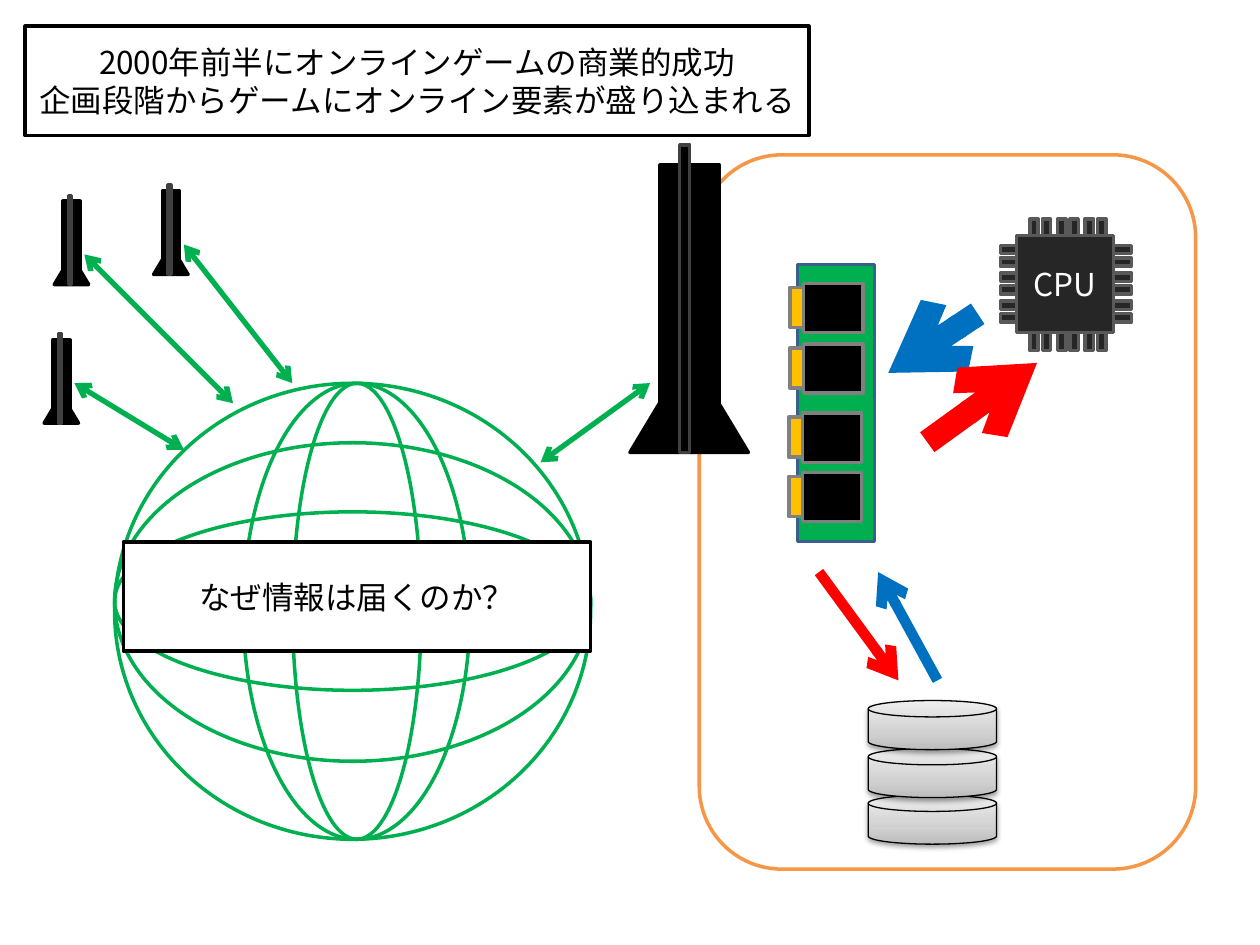
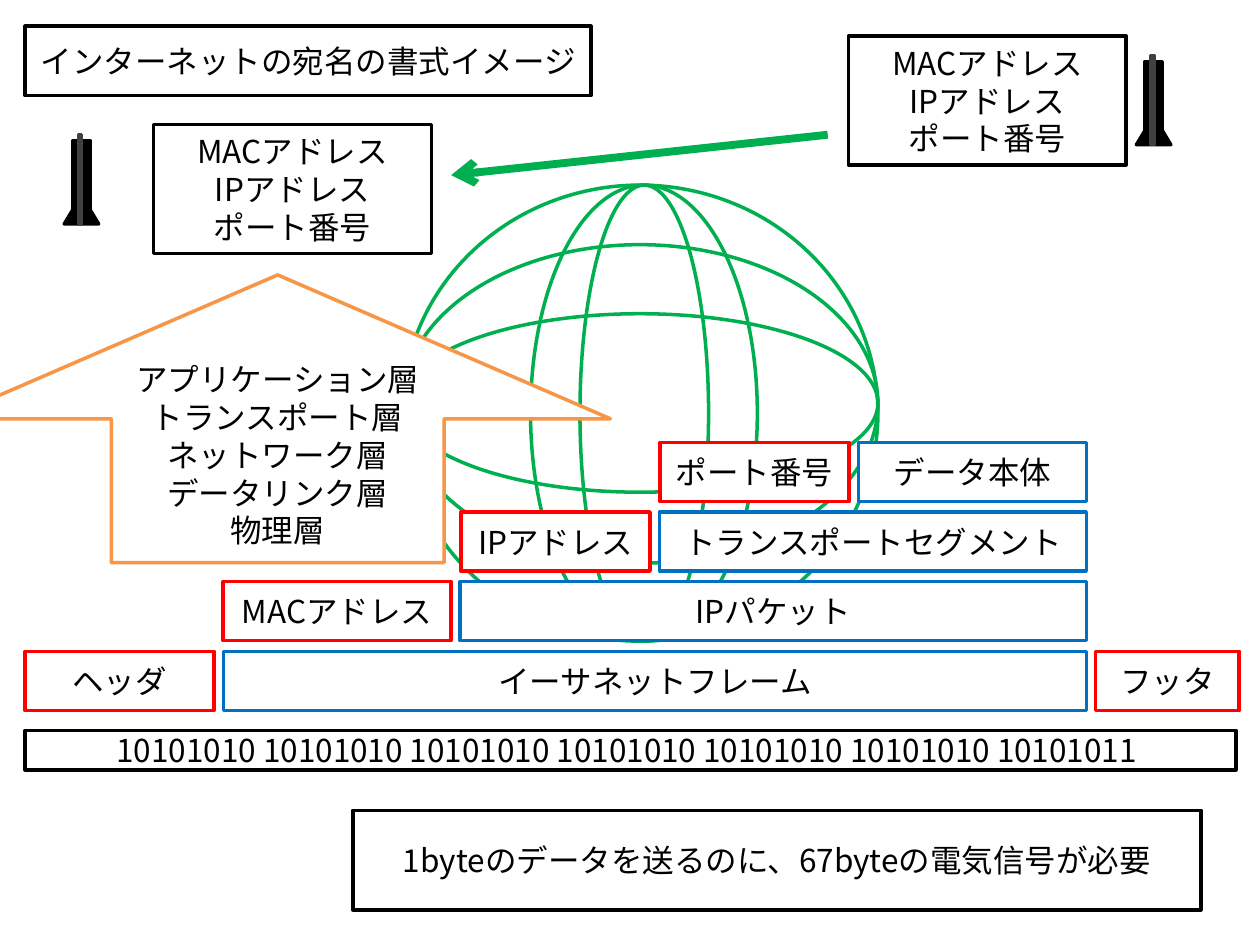
from dataclasses import dataclass

from lxml import etree
from pptx import Presentation
from pptx.dml.color import RGBColor
from pptx.enum.shapes import MSO_CONNECTOR, MSO_SHAPE
from pptx.enum.text import MSO_ANCHOR, PP_ALIGN
from pptx.oxml.ns import qn
from pptx.util import Pt

RECT = MSO_SHAPE.RECTANGLE
ROUNDED = MSO_SHAPE.ROUNDED_RECTANGLE
TRIANGLE = MSO_SHAPE.ISOSCELES_TRIANGLE
ELLIPSE = MSO_SHAPE.OVAL
EQUAL = MSO_SHAPE.MATH_EQUAL
DISK = MSO_SHAPE.FLOWCHART_MAGNETIC_DISK
BLOCK_ARROW = MSO_SHAPE.RIGHT_ARROW
STRAIGHT = MSO_CONNECTOR.STRAIGHT
MIDDLE = MSO_ANCHOR.MIDDLE
CENTER = PP_ALIGN.CENTER


@dataclass(frozen=True)
class Theme:
    font: str = "Noto Sans CJK JP"
    text_size: float = 18
    outline: float = 2
    hairline: float = 0.75
    white: str = "FFFFFF"
    black: str = "000000"
    green: str = "00B050"
    orange: str = "F79646"
    blue: str = "0070C0"
    red: str = "FF0000"
    gold: str = "FFC000"
    gray: str = "808080"
    tower_edge: str = "404040"
    cpu_fill: str = "262626"
    cpu_edge: str = "595959"
    board_edge: str = "3A5F8C"
    disk_stops: tuple = ((0, "BDBDBD"), (35, "D1D1D1"), (100, "EEEEEE"))


theme = Theme()


def add_box(shapes, kind, place, fill, line, text="", color=theme.black, weight=theme.outline):
    box = shapes.add_shape(kind, *[Pt(value) for value in place])
    box.shadow.inherit = False
    if fill:
        box.fill.solid()
        box.fill.fore_color.rgb = RGBColor.from_string(fill)
    else:
        box.fill.background()
    box.line.color.rgb = RGBColor.from_string(line)
    box.line.width = Pt(weight)
    if text:
        frame = box.text_frame
        frame.text = text
        frame.vertical_anchor = MIDDLE
        font_format = {"size": Pt(theme.text_size), "name": theme.font}
        for para in frame.paragraphs:
            para.alignment = CENTER
            for span in para.runs:
                for name, value in font_format.items():
                    setattr(span.font, name, value)
                span.font.color.rgb = RGBColor.from_string(color)
                properties = span.font._element
                etree.SubElement(properties, qn("a:ea"), typeface=theme.font)
    return box


def add_arrow(page, start, end, color, weight, ends=("tailEnd",)):
    arrow = page.shapes.add_connector(STRAIGHT, *[Pt(value) for value in start + end])
    arrow.line.color.rgb = RGBColor.from_string(color)
    arrow.line.width = Pt(weight)
    outline = arrow.line._get_or_add_ln()
    for end_name in ends:
        etree.SubElement(outline, qn(f"a:{end_name}"), type="arrow")
    etree.SubElement(arrow._element.spPr, qn("a:effectLst"))


deck = Presentation()
deck.slide_width, deck.slide_height = Pt(720), Pt(540)
blank = deck.slide_layouts[6]
online_page, address_page = [deck.slides.add_slide(blank) for _ in range(2)]

add_box(online_page.shapes, ROUNDED, (399.6, 88.5, 283.7, 408.2), theme.white, theme.orange)

shared_parts = (
    (
        online_page,
        "2000年前半にオンラインゲームの商業的成功\n企画段階からゲームにオンライン要素が盛り込まれる",
        (14.4, 15, 447.8, 62.6),
        (65.5, 219),
        ((360, 82.8, 175.7), (31, 111.6, 51), (87.8, 105.8, 51), (25.2, 190.8, 51)),
    ),
    (
        address_page,
        "インターネットの宛名の書式イメージ",
        (14.4, 15, 323.3, 39.6),
        (229.7, 105.8),
        ((36.7, 77, 51), (649.4, 31.7, 51)),
    ),
)
globe_rings = (
    (0, 0, 272, 260.6, theme.white),
    (0, 34, 272, 182, None),
    (0, 73.5, 272, 102, None),
    (73.5, 0, 129.6, 260.6, None),
    (101.7, 0, 73.5, 260.6, None),
)
tower_parts = (
    (RECT, 0.255, 0.066, 0.5, 0.807, theme.black),
    (TRIANGLE, 0, 0.68, 1, 0.32, theme.black),
    (RECT, 0.42, 0, 0.085, 1, theme.tower_edge),
)
for page, title, title_place, globe_corner, towers in shared_parts:
    add_box(page.shapes, RECT, title_place, theme.white, theme.black, title)
    for left, top, height in towers:
        tower = page.shapes.add_group_shape()
        width = height * 0.385
        for kind, x, y, part_width, part_height, edge in tower_parts:
            place = (left + x * width, top + y * height, part_width * width, part_height * height)
            add_box(tower.shapes, kind, place, theme.black, edge)
    globe = page.shapes.add_group_shape()
    for x, y, width, height, fill in globe_rings:
        place = (globe_corner[0] + x, globe_corner[1] + y, width, height)
        add_box(globe.shapes, ELLIPSE, place, fill, theme.green)

cpu = online_page.shapes.add_group_shape()
for step in range(3):
    for left in (632.9, 569.5):
        place = (left, 136.1 + 15.9 * step, 15.8, 20.2)
        add_box(cpu.shapes, EQUAL, place, theme.cpu_fill, theme.cpu_edge)
    for top in (121.7, 183.6):
        place = (585.4 + 15.8 * step, top, 18, 20.2)
        pin = add_box(cpu.shapes, EQUAL, place, theme.cpu_fill, theme.cpu_edge)
        pin.rotation = 90
add_box(cpu.shapes, RECT, (581, 134.6, 55.4, 55.4), theme.cpu_fill, theme.cpu_edge, "CPU", theme.white)

storage = online_page.shapes.add_group_shape()
for top in (454.3, 427.7, 400.3):
    disk = add_box(storage.shapes, DISK, (496.1, top, 73.4, 28.1), None, theme.black, weight=theme.hairline)
    disk.fill.gradient()
    disk.fill.gradient_angle = 90
    stops = disk._element.spPr.find(f".//{qn('a:gsLst')}")
    for stop in list(stops):
        stops.remove(stop)
    for position, color in theme.disk_stops:
        stop = etree.SubElement(stops, qn("a:gs"), pos=str(position * 1000))
        etree.SubElement(stop, qn("a:srgbClr"), val=color)
    effects = disk._element.spPr.find(qn("a:effectLst"))
    shadow = etree.SubElement(
        effects, qn("a:outerShdw"), blurRad=str(Pt(3.1)), dist=str(Pt(1.6)), dir="5400000", rotWithShape="0"
    )
    shadow_color = etree.SubElement(shadow, qn("a:srgbClr"), val=theme.black)
    etree.SubElement(shadow_color, qn("a:alpha"), val="38000")

memory = online_page.shapes.add_group_shape()
add_box(memory.shapes, RECT, (455.8, 151.2, 43.9, 158.4), theme.green, theme.board_edge)
for left, top in ((451.4, 164.2), (451.4, 198.7), (450.7, 238.3), (450.7, 272.2)):
    add_box(memory.shapes, RECT, (left, top, 10.8, 23), theme.gold, theme.gray)
    add_box(memory.shapes, RECT, (left + 7.9, top - 2.2, 33.8, 28.1), theme.black, theme.gray)

for start, end, color, weight in (
    ((535.7, 388.8), (501.8, 326.9), theme.blue, 6),
    ((558.7, 179.3), (507.6, 213.1), theme.blue, 14),
    ((529.9, 252.7), (592.6, 207.4), theme.red, 14),
    ((468, 326.9), (513.4, 388.8), theme.red, 6),
):
    add_arrow(online_page, start, end, color, weight)

for start, end in (
    ((48.2, 145.4), (133.2, 230.4)),
    ((105.1, 139.7), (167, 218.9)),
    ((42.5, 218.9), (105.1, 257)),
    ((371.5, 218.9), (308.9, 264.2)),
):
    add_arrow(online_page, start, end, theme.green, 3, ("headEnd", "tailEnd"))
add_box(online_page.shapes, RECT, (70.6, 309.6, 266.8, 62.6), theme.white, theme.black, "なぜ情報は届くのか？")

row_height, row_step, gap, body_right = 33.8, 39.8, 5.3, 620.8
packet_rows = (
    (377.3, 108, "ポート番号", "データ本体"),
    (263.5, 108, "IPアドレス", "トランスポートセグメント"),
    (127.4, 130.3, "MACアドレス", "IPパケット"),
    (14.4, 108, "ヘッダ", "イーサネットフレーム"),
)
for row, (left, width, header, body) in enumerate(packet_rows):
    top = 252.8 + row * row_step
    body_left = left + width + gap
    body_place = (body_left, top, body_right - body_left, row_height)
    add_box(address_page.shapes, RECT, body_place, theme.white, theme.blue, body)
    add_box(address_page.shapes, RECT, (left, top, width, row_height), theme.white, theme.red, header)
footer_place = (body_right + gap, top, 82.1, row_height)
add_box(address_page.shapes, RECT, footer_place, theme.white, theme.red, "フッタ")

for left, top in ((87.8, 71.3), (484.8, 20.6)):
    address = "MACアドレス\nIPアドレス\nポート番号"
    add_box(address_page.shapes, RECT, (left, top, 158.7, 73.6), theme.white, theme.black, address)

bits = " ".join(["10101010"] * 6 + ["10101011 "])
add_box(address_page.shapes, RECT, (14.4, 417.4, 691.9, 22.5), theme.white, theme.black, bits)

layers = "アプリケーション層\nトランスポート層\nネットワーク層\nデータリンク層\n物理層"
layer_arrow = add_box(
    address_page.shapes, BLOCK_ARROW, (76.5, 49.2, 164.4, 380.2), theme.white, theme.orange, layers
)
layer_arrow.rotation = 270
layer_arrow.text_frame._txBody.bodyPr.set("vert", "vert")

add_box(
    address_page.shapes,
    RECT,
    (201.6, 463, 484.6, 56.9),
    theme.white,
    theme.black,
    "1byteのデータを送るのに、67byteの電気信号が必要",
)
add_arrow(address_page, (473, 77), (257.8, 100.1), theme.green, 4.5)

deck.save("out.pptx")
